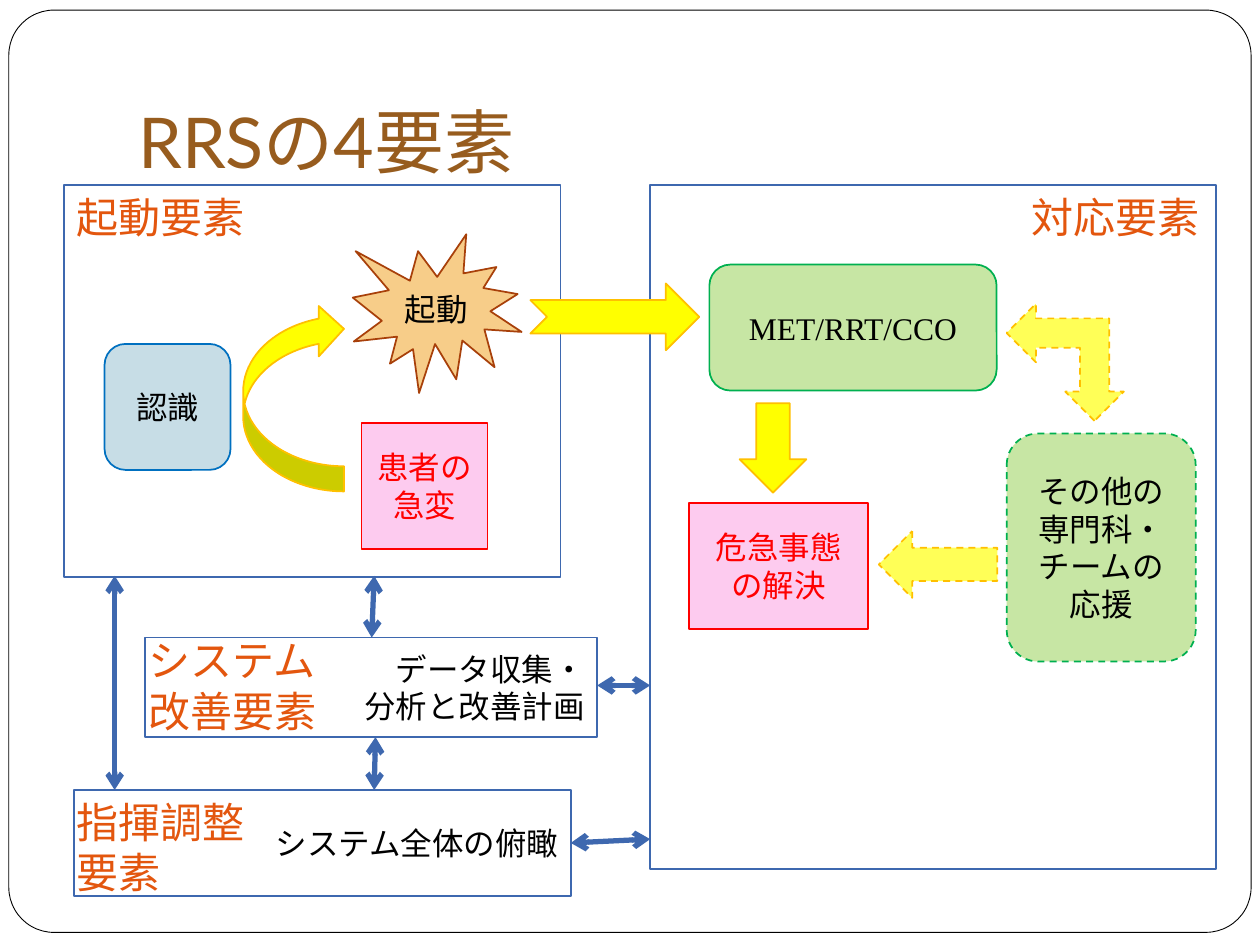
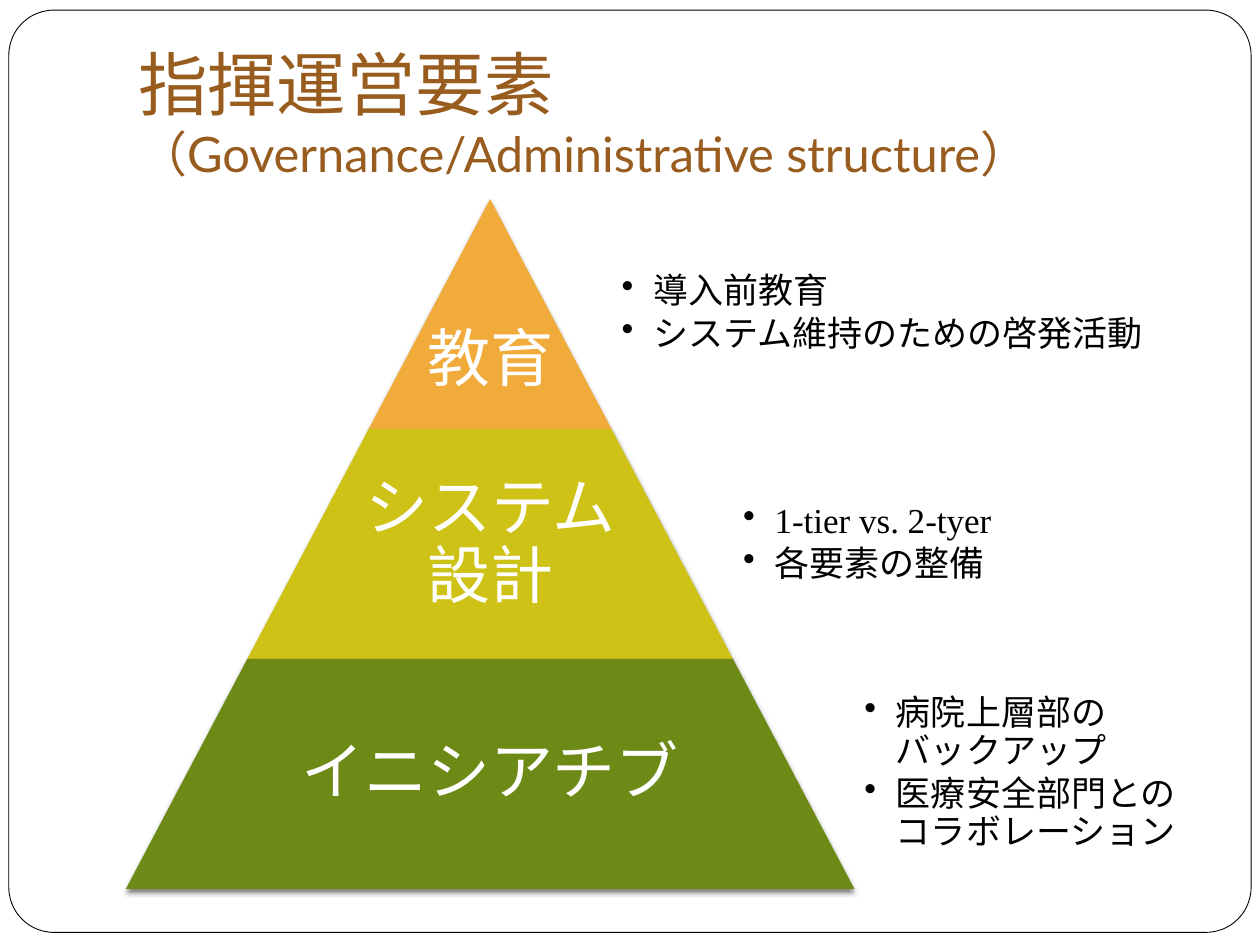
from lxml import etree
from pptx import Presentation
from pptx.dml.color import RGBColor
from pptx.enum.dml import MSO_LINE
from pptx.enum.shapes import MSO_CONNECTOR, MSO_SHAPE
from pptx.enum.text import MSO_ANCHOR, PP_ALIGN
from pptx.oxml.ns import qn
from pptx.util import Inches, Pt

RECT, ROUND = MSO_SHAPE.RECTANGLE, MSO_SHAPE.ROUNDED_RECTANGLE
FLOW, BURST = MSO_SHAPE.FLOWCHART_PROCESS, MSO_SHAPE.EXPLOSION1
DOWN, CURVED = MSO_SHAPE.DOWN_ARROW, MSO_SHAPE.CURVED_LEFT_ARROW
NOTCHED, CORNER = MSO_SHAPE.NOTCHED_RIGHT_ARROW, MSO_SHAPE.LEFT_UP_ARROW
TRAPEZOID, STRAIGHT = MSO_SHAPE.TRAPEZOID, MSO_CONNECTOR.STRAIGHT
LEFT, CENTER, RIGHT = PP_ALIGN.LEFT, PP_ALIGN.CENTER, PP_ALIGN.RIGHT
TOP, MIDDLE, BOTTOM = MSO_ANCHOR.TOP, MSO_ANCHOR.MIDDLE, MSO_ANCHOR.BOTTOM
DASH = MSO_LINE.DASH

HEAD, BODY = "Lato", "Times New Roman"
BLACK, WHITE, BROWN, ORANGE = "000000", "FFFFFF", "975C1E", "E3560E"
RED, PINK, GREEN, LIME = "FF0000", "FDCBEF", "00B050", "C7E6A4"
BLUE, GOLD, YELLOW, PALE = "3E68AF", "FFC000", "FFFF00", "FFFF57"
INSETS = (0.1, 0.05, 0.1, 0.05)

# Slide 1: text, place, wraps
LABELS = [
    ("起動要素", (0.51, 1.47, 1.56, 0.5), False),
    ("対応要素", (8.09, 1.47, 1.56, 0.5), False),
    ("指揮調整要素", (0.51, 6.27, 1.65, 0.91), True),
    ("システム改善要素", (1.08, 4.99, 1.58, 0.91), True),
]
# preset, place, text
FRAMES = [
    (FLOW, (0.59, 6.27, 3.94, 0.84), "システム全体の俯瞰"),
    (FLOW, (1.15, 5.06, 3.59, 0.79), "データ収集・\n分析と改善計画"),
    (RECT, (0.51, 1.47, 3.94, 3.11), ""),
    (RECT, (5.16, 1.47, 4.49, 5.43), ""),
]
# preset, place, fill, line, dash, text, text colour
STEPS = [
    (RECT, (2.87, 3.36, 1, 1), PINK, RED, None, "患者の急変", RED),
    (ROUND, (0.83, 2.73, 1, 1), "C7DDE6", "0070C0", None, "認識", BLACK),
    (RECT, (5.47, 3.99, 1.42, 1), PINK, RED, None, "危急事態の解決", RED),
    (ROUND, (5.63, 2.1, 2.28, 1), LIME, GREEN, None, "MET/RRT/CCO", BLACK),
    (ROUND, (7.99, 3.44, 1.5, 1.81), LIME, GREEN, DASH,
     "その他の専門科・チームの応援", BLACK),
    (BURST, (2.8, 1.86, 1.34, 1.26), "F7CD89", "A8400A", None, "起動", BLACK),
]
# preset, place, turn, fill, dash
ARROWS = [
    (CURVED, (1.93, 2.41, 0.8, 1.49), 180, YELLOW, None),
    (DOWN, (5.87, 3.2, 0.53, 0.71), 0, YELLOW, None),
    (DOWN, (7.18, 4.01, 0.53, 0.94), 90, PALE, DASH),
    (NOTCHED, (4.21, 2.25, 1.34, 0.53), 0, YELLOW, None),
    (CORNER, (7.99, 2.41, 0.93, 0.93), 270, PALE, DASH),
]
LINKS = [
    (0.91, 4.57, 0.91, 6.27),
    (4.74, 5.44, 5.16, 5.44),
    (2.97, 4.57, 2.95, 5.06),
    (2.98, 5.85, 2.97, 6.27),
    (4.53, 6.69, 5.16, 6.66),
]

# Slide 2: name, colour, top inset, points
TIERS = [
    ("教育", "F1AB3B", 0.79, "導入前教育\nシステム維持のための啓発活動"),
    ("システム設計", "CFC217", 0.05, "1-tier vs. 2-tyer\n各要素の整備"),
    ("イニシアチブ", "6D8A16", 0.05,
     "病院上層部の\vバックアップ\n医療安全部門とのコラボレーション"),
]
APEX_X, APEX_Y, TIER_H, SLOPE = 3.89, 1.58, 1.825, 0.528
EDGE = 9.5


def rgb(code):
    return RGBColor.from_string(code)


def add_xml(parent, tag, **attrs):
    return etree.SubElement(parent, qn(tag), attrs)


def write(shape, text, size, color, align=LEFT, anchor=TOP, font=BODY,
          insets=INSETS, wrap=True, space=None):
    """Fill a shape with text; space is the gap after a paragraph at 90% leading."""
    frame = shape.text_frame
    frame.text = text
    frame.word_wrap = wrap
    frame.vertical_anchor = anchor
    (frame.margin_left, frame.margin_top,
     frame.margin_right, frame.margin_bottom) = map(Inches, insets)
    for para in frame.paragraphs:
        para.alignment = align
        if space is not None:
            para.line_spacing = 0.9
            para.space_after = Pt(space)
        for run in para.runs:
            run.font.size = Pt(size)
            run.font.name = font
            run.font.color.rgb = rgb(color)
    return frame


def add_text(slide, place, text, size, color, **style):
    box = slide.shapes.add_textbox(*map(Inches, place))
    return write(box, text, size, color, **style)


def add_shape(slide, preset, place, fill=None, line=None, width=1, dash=None):
    shape = slide.shapes.add_shape(preset, *map(Inches, place))
    shape.shadow.inherit = False
    if fill:
        shape.fill.solid()
        shape.fill.fore_color.rgb = rgb(fill)
    else:
        shape.fill.background()
    if line:
        shape.line.color.rgb = rgb(line)
        shape.line.width = Pt(width)
        if dash:
            shape.line.dash_style = dash
    else:
        shape.line.fill.background()
    return shape


def add_link(slide, ends):
    """Draw a blue line with an arrowhead at both ends."""
    link = slide.shapes.add_connector(STRAIGHT, *map(Inches, ends))
    link.line.color.rgb = rgb(BLUE)
    link.line.width = Pt(3)
    outline = link.line._get_or_add_ln()
    for end in ("a:headEnd", "a:tailEnd"):
        add_xml(outline, end, type="arrow")
    add_xml(link._element.spPr, "a:effectLst")


def add_shadow(shape):
    effects = shape._element.spPr.find(qn("a:effectLst"))
    shade = add_xml(effects, "a:outerShdw", blurRad=str(Pt(3)), dist=str(Pt(2)),
                    dir="5400000", rotWithShape="0")
    add_xml(add_xml(shade, "a:srgbClr", val=BLACK), "a:alpha", val="50000")


def add_bullets(frame):
    for para in frame.paragraphs:
        props = para._p.get_or_add_pPr()
        props.set("marL", str(Inches(0.25)))
        props.set("indent", str(-Inches(0.25)))
        add_xml(props, "a:buChar", char="•")


def new_slide(deck, title, *sizes):
    """Add a slide with the rounded border and a title, one size per line."""
    slide = deck.slides.add_slide(deck.slide_layouts[6])
    border = add_shape(slide, ROUND, (0.07, 0.08, 9.86, 7.32), WHITE, BLACK, 0.5)
    border.adjustments[0] = 0.049
    frame = add_text(slide, (1, 0.3, 9, 1.25), title, sizes[0], BROWN, font=HEAD,
                     anchor=BOTTOM, insets=(0.1, 0.05, 0.1, 0.1))
    for run, size in zip(frame.paragraphs[0].runs, sizes):
        run.font.size = Pt(size)
    return slide


def draw_parts(deck):
    slide = new_slide(deck, "RRSの4要素", 40)
    for preset, place, text in FRAMES:
        box = add_shape(slide, preset, place, line=BLUE)
        if text:
            write(box, text, 18, BLACK, align=RIGHT, anchor=MIDDLE)
    for text, place, wrap in LABELS:
        add_text(slide, place, text, 24, ORANGE, wrap=wrap)
    for preset, place, fill, line, dash, text, color in STEPS:
        step = add_shape(slide, preset, place, fill, line, dash=dash)
        write(step, text, 18, color, align=CENTER, anchor=MIDDLE)
    for preset, place, turn, fill, dash in ARROWS:
        arrow = add_shape(slide, preset, place, fill, GOLD, dash=dash)
        arrow.rotation = turn
    for ends in LINKS:
        add_link(slide, ends)


def draw_pyramid(deck):
    slide = new_slide(
        deck, "指揮運営要素\v（Governance/Administrative structure）", 39.6, 27.9)
    step = SLOPE * TIER_H
    for i, (name, color, inset, points) in enumerate(TIERS):
        top, half = APEX_Y + i * TIER_H, (i + 1) * step
        tier = add_shape(slide, TRAPEZOID,
                         (APEX_X - half, top, 2 * half, TIER_H), color)
        tier.adjustments[0] = SLOPE
        add_shadow(tier)
        wide = max(2 * step, 1.3 * half)
        add_text(slide, (APEX_X - wide / 2, top, wide, TIER_H), name, 36, WHITE,
                 align=CENTER, anchor=MIDDLE, space=12.6,
                 insets=(0.05, inset, 0.05, 0.05))
        left = APEX_X + half
        add_bullets(add_text(slide, (left, top, EDGE - left, TIER_H), points, 20,
                             BLACK, anchor=MIDDLE, space=3, insets=(0.08,) * 4))


def main():
    deck = Presentation()
    deck.slide_width, deck.slide_height = Inches(10), Inches(7.5)
    draw_parts(deck)
    draw_pyramid(deck)
    deck.save("out.pptx")


if __name__ == "__main__":
    main()
